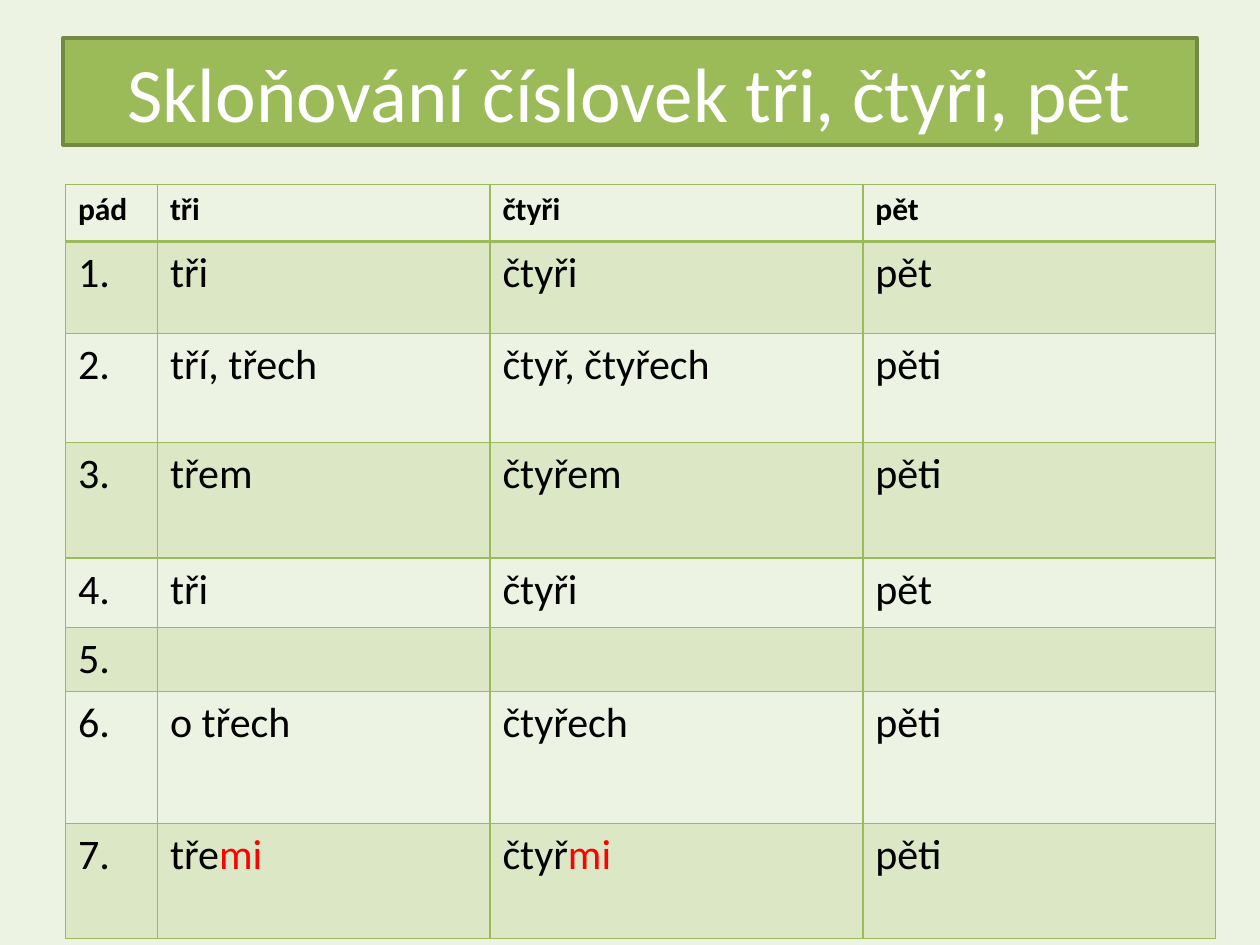
import dataclasses
import typing

import lxml.etree
import pptx
import pptx.dml.color
import pptx.enum.shapes
import pptx.enum.text
import pptx.oxml.ns
import pptx.util

Pt = pptx.util.Pt


@dataclasses.dataclass(frozen=True)
class Theme:
    background: str = "EDF3E2"
    green: str = "9BBB59"
    dark_green: str = "738A42"
    white: str = "FFFFFF"
    black: str = "000000"
    red: str = "FF0000"
    font: str = "Calibri"
    title_size: int = 44
    header_size: int = 18
    body_size: int = 24
    band_opacity: int = 20


@dataclasses.dataclass(frozen=True)
class Declension:
    case: str
    three: str
    four: str
    five: str
    height: float
    ending: str = ""

    def forms(self) -> tuple[tuple[str, str], ...]:
        return ((self.case, ""), (self.three, self.ending),
                (self.four, self.ending), (self.five, ""))


THEME = Theme()
COLUMN_WIDTHS = (52.6, 190, 213.1, 201.6)
DECLENSIONS = (
    Declension("pád", "tři", "čtyři", "pět", 32.4),
    Declension("1.", "tři", "čtyři", "pět", 52.6),
    Declension("2.", "tří, třech", "čtyř, čtyřech", "pěti", 62.4),
    Declension("3.", "třem", "čtyřem", "pěti", 66),
    Declension("4.", "tři", "čtyři", "pět", 39.6),
    Declension("5.", "", "", "", 36.6),
    Declension("6.", "o třech", "čtyřech", "pěti", 75.4),
    Declension("7.", "tře", "čtyř", "pěti", 65.8, ending="mi"),
)


def rgb(value: str) -> pptx.dml.color.RGBColor:
    return pptx.dml.color.RGBColor.from_string(value)


def add_run(paragraph: typing.Any, text: str, size: int, color: str, bold: bool = False) -> None:
    run = paragraph.add_run()
    run.text = text
    for name, value in {"name": THEME.font, "size": Pt(size), "bold": bold}.items():
        setattr(run.font, name, value)
    run.font.color.rgb = rgb(color)


def paint(fill: typing.Any, color: str) -> None:
    fill.solid()
    fill.fore_color.rgb = rgb(color)


def child(parent: typing.Any, tag: str, **attributes: str) -> typing.Any:
    return lxml.etree.SubElement(parent, pptx.oxml.ns.qn(tag), attributes)


def add_borders(cell: typing.Any, widths: dict[str, float]) -> None:
    properties = cell._tc.get_or_add_tcPr()
    for side, width in widths.items():
        line = child(properties, f"a:ln{side}", w=str(Pt(width)))
        child(child(line, "a:solidFill"), "a:srgbClr", val=THEME.green)


def fill_band(cell: typing.Any) -> None:
    paint(cell.fill, THEME.green)
    color = cell._tc.tcPr.find(".//" + pptx.oxml.ns.qn("a:solidFill") + "[last()]")
    fill = cell._tc.tcPr.find(pptx.oxml.ns.qn("a:solidFill"))
    color = fill[0]
    child(color, "a:alpha", val=str(THEME.band_opacity * 1000))


def add_title(slide: typing.Any, text: str) -> None:
    title = slide.shapes.add_shape(
        pptx.enum.shapes.MSO_SHAPE.RECTANGLE, Pt(36), Pt(21.6), Pt(648), Pt(61.2))
    title.shadow.inherit = False
    paint(title.fill, THEME.green)
    paint(title.line.fill, THEME.dark_green)
    title.line.width = Pt(2)
    frame_format = {"word_wrap": True, "vertical_anchor": pptx.enum.text.MSO_ANCHOR.MIDDLE}
    for name, value in frame_format.items():
        setattr(title.text_frame, name, value)
    heading = title.text_frame.paragraphs[0]
    heading.alignment = pptx.enum.text.PP_ALIGN.CENTER
    add_run(heading, text, THEME.title_size, THEME.white)


def add_declension_table(slide: typing.Any) -> None:
    table = slide.shapes.add_table(
        len(DECLENSIONS), len(COLUMN_WIDTHS), Pt(37.4), Pt(105.5),
        Pt(sum(COLUMN_WIDTHS)), Pt(sum(entry.height for entry in DECLENSIONS))).table
    table.horz_banding = False
    for column, width in zip(table.columns, COLUMN_WIDTHS):
        column.width = Pt(width)
    for index, (row, entry) in enumerate(zip(table.rows, DECLENSIONS)):
        row.height = Pt(entry.height)
        is_header = index == 0
        size = THEME.header_size if is_header else THEME.body_size
        widths = {"L": 1, "R": 1, "T": 2 if index == 1 else 1, "B": 2 if is_header else 1}
        for cell, (stem, ending) in zip(row.cells, entry.forms()):
            add_borders(cell, widths)
            if index % 2:
                fill_band(cell)
            else:
                cell.fill.background()
            paragraph = cell.text_frame.paragraphs[0]
            for text, color in ((stem, THEME.black), (ending, THEME.red)):
                if text:
                    add_run(paragraph, text, size, color, is_header)


def main() -> None:
    presentation = pptx.Presentation()
    for name, value in {"slide_width": Pt(720), "slide_height": Pt(540)}.items():
        setattr(presentation, name, value)
    slide = presentation.slides.add_slide(presentation.slide_layouts[6])
    paint(slide.background.fill, THEME.background)
    add_title(slide, "Skloňování číslovek tři, čtyři, pět")
    add_declension_table(slide)
    presentation.save("out.pptx")


if __name__ == "__main__":
    main()
